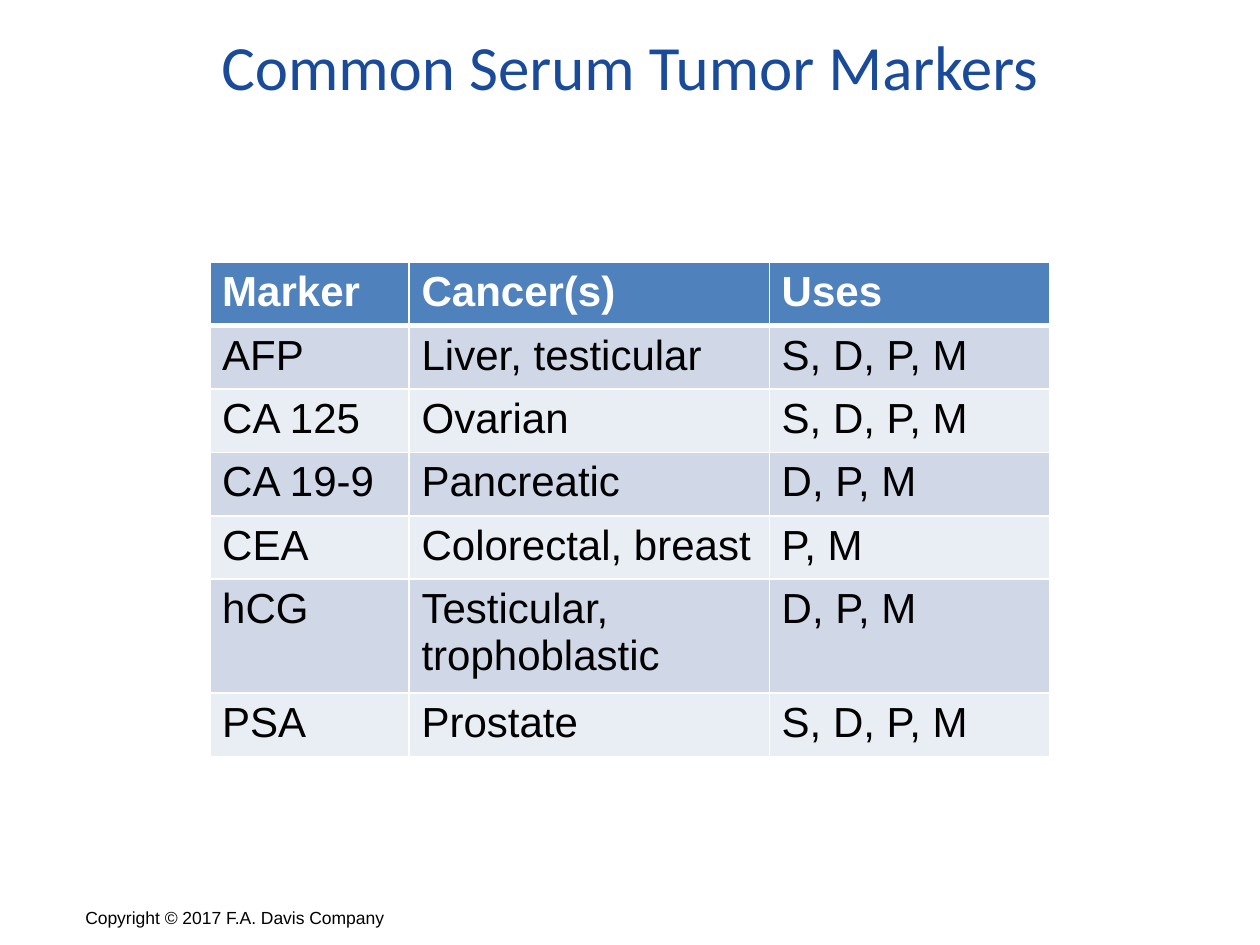
from dataclasses import dataclass
from lxml.etree import SubElement
from pptx import Presentation
from pptx.dml.color import RGBColor
from pptx.enum.text import MSO_ANCHOR, MSO_AUTO_SIZE, PP_ALIGN
from pptx.oxml.ns import qn
from pptx.util import Cm, Pt


@dataclass(frozen=True)
class Theme:
    navy: str = "1A4B9A"
    head: str = "4F81BD"
    bands: tuple = ("D0D8E8", "E9EDF4")
    white: str = "FFFFFF"
    black: str = "000000"
    title: int = 36
    body: int = 24
    small: int = 10


theme = Theme()


def style(frame, size, color, face="Arial", bold=False):
    for run in frame.paragraphs[0].runs:
        font = run.font
        font.name, font.size, font.bold = face, Pt(size), bold
        font.color.rgb = RGBColor.from_string(color)


def border(cell, side, width):
    line = SubElement(cell._tc.get_or_add_tcPr(), qn(f"a:ln{side}"), w=str(Pt(width)))
    fill = SubElement(line, qn("a:solidFill"))
    SubElement(fill, qn("a:srgbClr"), val=theme.white)


deck = Presentation()
deck.slide_width, deck.slide_height = Cm(25.4), Cm(19.05)
slide = deck.slides.add_slide(deck.slide_layouts[6])

footer = slide.shapes.add_textbox(Cm(1.47), Cm(18.16), Cm(6.76), Cm(0.69)).text_frame
footer.word_wrap = False
footer.auto_size = MSO_AUTO_SIZE.SHAPE_TO_FIT_TEXT
footer.text = "Copyright © 2017 F.A. Davis Company"
style(footer, theme.small, theme.black)

title = slide.shapes.add_textbox(0, Cm(0.36), deck.slide_width, Cm(1.9)).text_frame
title.word_wrap = True
title.vertical_anchor = MSO_ANCHOR.MIDDLE
title.text = "Common Serum Tumor Markers"
title.paragraphs[0].alignment = PP_ALIGN.CENTER
style(title, theme.title, theme.navy, "Calibri")

markers = [
    ("Marker", "Cancer(s)", "Uses"),
    ("AFP", "Liver, testicular", "S, D, P, M"),
    ("CA 125", "Ovarian", "S, D, P, M"),
    ("CA 19-9", "Pancreatic", "D, P, M"),
    ("CEA", "Colorectal, breast", "P, M"),
    ("hCG", "Testicular, trophoblastic", "D, P, M"),
    ("PSA", "Prostate", "S, D, P, M"),
]
widths = (4.02, 7.26, 5.65)
heights = [1.27] * 5 + [2.28, 1.27]

table = slide.shapes.add_table(
    len(markers), len(widths), Cm(4.23), Cm(5.29), Cm(sum(widths)), Cm(sum(heights))
).table
for column, width in zip(table.columns, widths):
    column.width = Cm(width)

for r, (row, height) in enumerate(zip(markers, heights)):
    table.rows[r].height = Cm(height)
    top = r == 0
    for c, text in enumerate(row):
        cell = table.cell(r, c)
        cell.margin_left = cell.margin_right = Cm(0.25)
        cell.margin_top = cell.margin_bottom = Cm(0.13)
        for side in "LRTB":
            thick = (r, side) in ((0, "B"), (1, "T"))
            border(cell, side, 3 if thick else 1)
        cell.fill.solid()
        shade = theme.head if top else theme.bands[(r - 1) % 2]
        cell.fill.fore_color.rgb = RGBColor.from_string(shade)
        cell.text_frame.text = text
        style(cell.text_frame, theme.body, theme.white if top else theme.black, bold=top)

deck.save("out.pptx")
